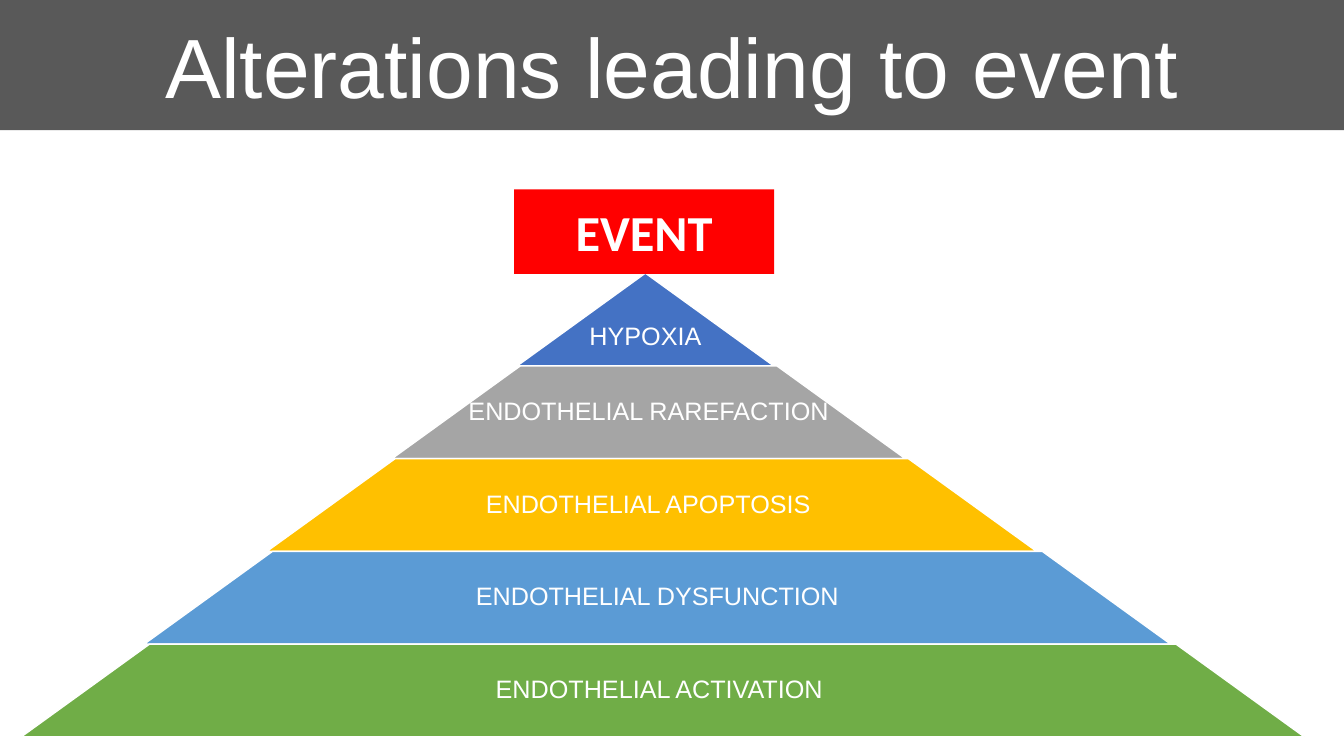
from pptx import Presentation
from pptx import util as u
from pptx.dml.color import RGBColor
from pptx.enum import shapes, text

TITLE = "Alterations leading to event"
EVENT = "EVENT"
# label, fill, left edge of the tier's base
TIERS = [
    ("HYPOXIA", "4472C4", 369.4),
    ("ENDOTHELIAL RAREFACTION", "A5A5A5", 280),
    ("ENDOTHELIAL APOPTOSIS ", "FFC000", 190.6),
    ("ENDOTHELIAL DYSFUNCTION", "5B9BD5", 103),
    ("ENDOTHELIAL ACTIVATION ", "70AD47", 15.2),
]
THEME = {
    "white": "FFFFFF", "band": "595959", "event": "FF0000",
    "title": {"name": "Arial", "size": u.Pt(60), "bold": False},
    "tier": {"name": "Arial", "size": u.Pt(18)},
    "alarm": {"name": "Calibri", "size": u.Pt(36), "bold": True},
}
SLIDE_WIDTH, SLIDE_HEIGHT = 960, 540
BAND_HEIGHT = 93
EVENT_BOX = (367.2, 135.2, 185.8, 60.4)
PYRAMID_TOP, TIER_HEIGHT, TIER_STEP = 195.1, 66.25, 183.3
SIDE_INSET, EDGE_INSET, APEX_INSET = 14.25, 2, 27


def set_all(target, values):
    for name, value in values.items():
        setattr(target, name, value)


def paint(shape, color):
    shape.fill.solid()
    shape.fill.fore_color.rgb = RGBColor.from_string(color)


def write(shape, words, font):
    """Put one centred white line of text in the shape."""
    frame = shape.text_frame
    set_all(frame, {"word_wrap": True, "auto_size": text.MSO_AUTO_SIZE.NONE,
                    "vertical_anchor": text.MSO_ANCHOR.MIDDLE})
    para = frame.paragraphs[0]
    para.alignment = text.PP_ALIGN.CENTER
    span = para.add_run()
    span.text = words
    set_all(span.font, font)
    span.font.color.rgb = RGBColor.from_string(THEME["white"])
    return frame, para


def add_title(page):
    title = page.shapes.title
    set_all(title, {"left": 0, "top": 0, "width": u.Pt(SLIDE_WIDTH),
                    "height": u.Pt(BAND_HEIGHT)})
    paint(title, THEME["band"])
    write(title, TITLE, THEME["title"])


def add_tier(page, level, label, color, left):
    """Draw the tier whose base is `level` steps wide and top one step less."""
    top = PYRAMID_TOP + (level - 1) * TIER_HEIGHT
    bottom = top + TIER_HEIGHT
    right = left + level * TIER_STEP
    slope = TIER_STEP / 2
    corners = [(left, bottom), (left + slope, top),
               (right - slope, top), (right, bottom)]
    points = [(u.Pt(x), u.Pt(y)) for x, y in corners]
    builder = page.shapes.build_freeform(*points[0])
    builder.add_line_segments(points[1:], close=True)
    tier = builder.convert_to_shape()
    tier.shadow.inherit = False
    paint(tier, color)
    tier.line.color.rgb = RGBColor.from_string(THEME["white"])
    tier.line.width = u.Pt(1)

    frame, para = write(tier, label, THEME["tier"])
    is_apex = level == 1
    side = u.Pt(EDGE_INSET if is_apex else SIDE_INSET * level)
    set_all(frame, {"margin_left": side, "margin_right": side,
                    "margin_top": u.Pt(APEX_INSET if is_apex else EDGE_INSET),
                    "margin_bottom": u.Pt(EDGE_INSET)})
    set_all(para, {"line_spacing": 0.9, "space_after": u.Pt(6.3)})


def add_event(page):
    box = page.shapes.add_shape(shapes.MSO_SHAPE.RECTANGLE, *map(u.Pt, EVENT_BOX))
    box.shadow.inherit = False
    paint(box, THEME["event"])
    box.line.fill.background()
    write(box, EVENT, THEME["alarm"])


def main():
    deck = Presentation()
    set_all(deck, {"slide_width": u.Pt(SLIDE_WIDTH), "slide_height": u.Pt(SLIDE_HEIGHT)})
    page = deck.slides.add_slide(deck.slide_layouts.get_by_name("Title Only"))
    add_title(page)
    for level, tier in enumerate(TIERS, start=1):
        add_tier(page, level, *tier)
    add_event(page)
    deck.save("out.pptx")


if __name__ == "__main__":
    main()
